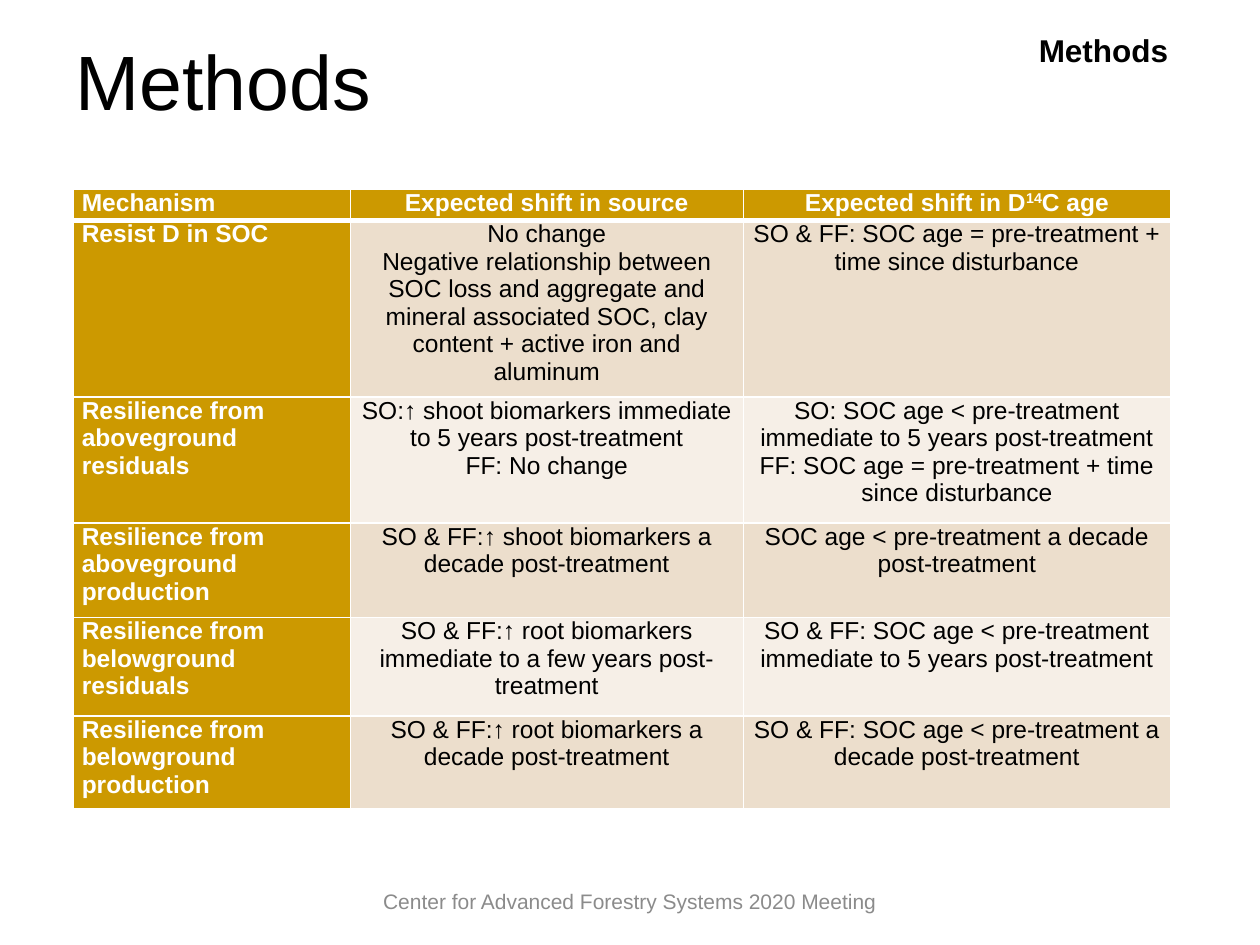
import pptx
import pptx.dml.color
import pptx.enum.text
import pptx.oxml
import pptx.oxml.ns
import pptx.util
import lxml.etree

Pt = pptx.util.Pt
ALIGN = pptx.enum.text.PP_ALIGN
ANCHOR = pptx.enum.text.MSO_ANCHOR
COLOURS = {
    "ink": "000000",
    "paper": "FFFFFF",
    "footer": "8B8B8B",
    "gold": "CC9900",
    "tan": "ECDECC",
    "cream": "F6EFE7",
}
SUPERSCRIPT = "30000"

COLUMN_WIDTHS = [158.4, 224.64, 244.08]
ROW_HEIGHTS = [18, 88.56, 72, 54, 56.16, 53.28]
# One list of paragraphs per cell; a paragraph is one string, or a tuple
# whose second part is raised.
ROWS = [
    [["Mechanism"], ["Expected shift in source"], [("Expected shift in D", "14", "C age")]],
    [
        ["Resist D in SOC"],
        [
            "No change",
            "Negative relationship between SOC loss and aggregate and mineral "
            "associated SOC, clay content + active iron and aluminum",
        ],
        ["SO & FF: SOC age = pre-treatment + time since disturbance"],
    ],
    [
        ["Resilience from aboveground residuals"],
        ["SO:↑ shoot biomarkers immediate to 5 years post-treatment", "FF: No change"],
        [
            "SO: SOC age < pre-treatment immediate to 5 years post-treatment",
            "FF: SOC age = pre-treatment + time since disturbance",
        ],
    ],
    [
        ["Resilience from aboveground production"],
        ["SO & FF:↑ shoot biomarkers a decade post-treatment"],
        ["SOC age < pre-treatment a decade post-treatment"],
    ],
    [
        ["Resilience from belowground residuals"],
        ["SO & FF:↑ root biomarkers immediate to a few years post-treatment"],
        ["SO & FF: SOC age < pre-treatment immediate to 5 years post-treatment"],
    ],
    [
        ["Resilience from belowground production"],
        ["SO & FF:↑ root biomarkers a decade post-treatment"],
        ["SO & FF: SOC age < pre-treatment a decade post-treatment"],
    ],
]


class SlideBuilder:
    font_name = "Arial"

    def __init__(self, slide):
        self.slide = slide

    def colour(self, name):
        return pptx.dml.color.RGBColor.from_string(COLOURS[name])

    def style(self, para, size, colour, bold=False, align=ALIGN.LEFT):
        para.alignment = align
        para.font.name = self.font_name
        para.font.size = Pt(size)
        para.font.bold = bold
        para.font.color.rgb = self.colour(colour)

    def text(self, words, left, top, width, height, size, colour="ink", bold=False,
             align=ALIGN.LEFT, anchor=ANCHOR.TOP, wrap=True, line_spacing=None):
        box = self.slide.shapes.add_textbox(Pt(left), Pt(top), Pt(width), Pt(height))
        frame = box.text_frame
        frame.word_wrap = wrap
        frame.vertical_anchor = anchor
        para = frame.paragraphs[0]
        para.add_run().text = words
        para.line_spacing = line_spacing
        self.style(para, size, colour, bold, align)

    def borders(self, cell, top, bottom):
        properties = cell._tc.get_or_add_tcPr()
        for side, width in (("L", 1), ("R", 1), ("T", top), ("B", bottom)):
            line = lxml.etree.SubElement(
                properties, pptx.oxml.ns.qn(f"a:ln{side}"), w=str(Pt(width)))
            fill = lxml.etree.SubElement(line, pptx.oxml.ns.qn("a:solidFill"))
            lxml.etree.SubElement(fill, pptx.oxml.ns.qn("a:srgbClr"), val=COLOURS["paper"])

    def cell(self, cell, paragraphs, fill, colour, bold, align):
        cell.margin_left = cell.margin_right = Pt(5)
        cell.margin_top = cell.margin_bottom = 0
        cell.fill.solid()
        cell.fill.fore_color.rgb = self.colour(fill)
        frame = cell.text_frame
        for index, content in enumerate(paragraphs):
            para = frame.add_paragraph() if index else frame.paragraphs[0]
            parts = (content,) if isinstance(content, str) else content
            for position, words in enumerate(parts):
                span = para.add_run()
                span.text = words
                if position == 1:
                    span._r.get_or_add_rPr().set("baseline", SUPERSCRIPT)
            self.style(para, 14, colour, bold, align)

    def table(self, rows, left, top, widths, heights):
        """Gold header row and first column, with banded body cells."""
        table = self.slide.shapes.add_table(
            len(rows), len(widths), Pt(left), Pt(top), Pt(sum(widths)), Pt(sum(heights))).table
        for column, width in zip(table.columns, widths):
            column.width = Pt(width)
        for row_index, (row, height) in enumerate(zip(rows, heights)):
            table.rows[row_index].height = Pt(height)
            for column_index, paragraphs in enumerate(row):
                cell = table.cell(row_index, column_index)
                heading = row_index == 0 or column_index == 0
                band = "tan" if row_index % 2 else "cream"
                self.borders(cell, top=3 if row_index == 1 else 1,
                             bottom=3 if row_index == 0 else 1)
                self.cell(cell, paragraphs,
                          fill="gold" if heading else band,
                          colour="paper" if heading else "ink",
                          bold=heading,
                          align=ALIGN.CENTER if column_index else ALIGN.LEFT)


def main():
    deck = pptx.Presentation()
    deck.slide_width, deck.slide_height = Pt(720), Pt(540)
    page = SlideBuilder(deck.slides.add_slide(deck.slide_layouts[6]))
    page.text("Center for Advanced Forestry Systems 2020 Meeting", 198, 500.4, 324, 28.8,
              size=12, colour="footer", align=ALIGN.CENTER, anchor=ANCHOR.MIDDLE)
    page.text("Methods", 514.8, 14.4, 159.84, 28.8, size=18, bold=True,
              align=ALIGN.RIGHT, wrap=False)
    page.text("Methods", 36, 21.6, 648, 90, size=44, line_spacing=0.9)
    page.table(ROWS, 41.76, 108, COLUMN_WIDTHS, ROW_HEIGHTS)
    deck.save("out.pptx")


if __name__ == "__main__":
    main()
